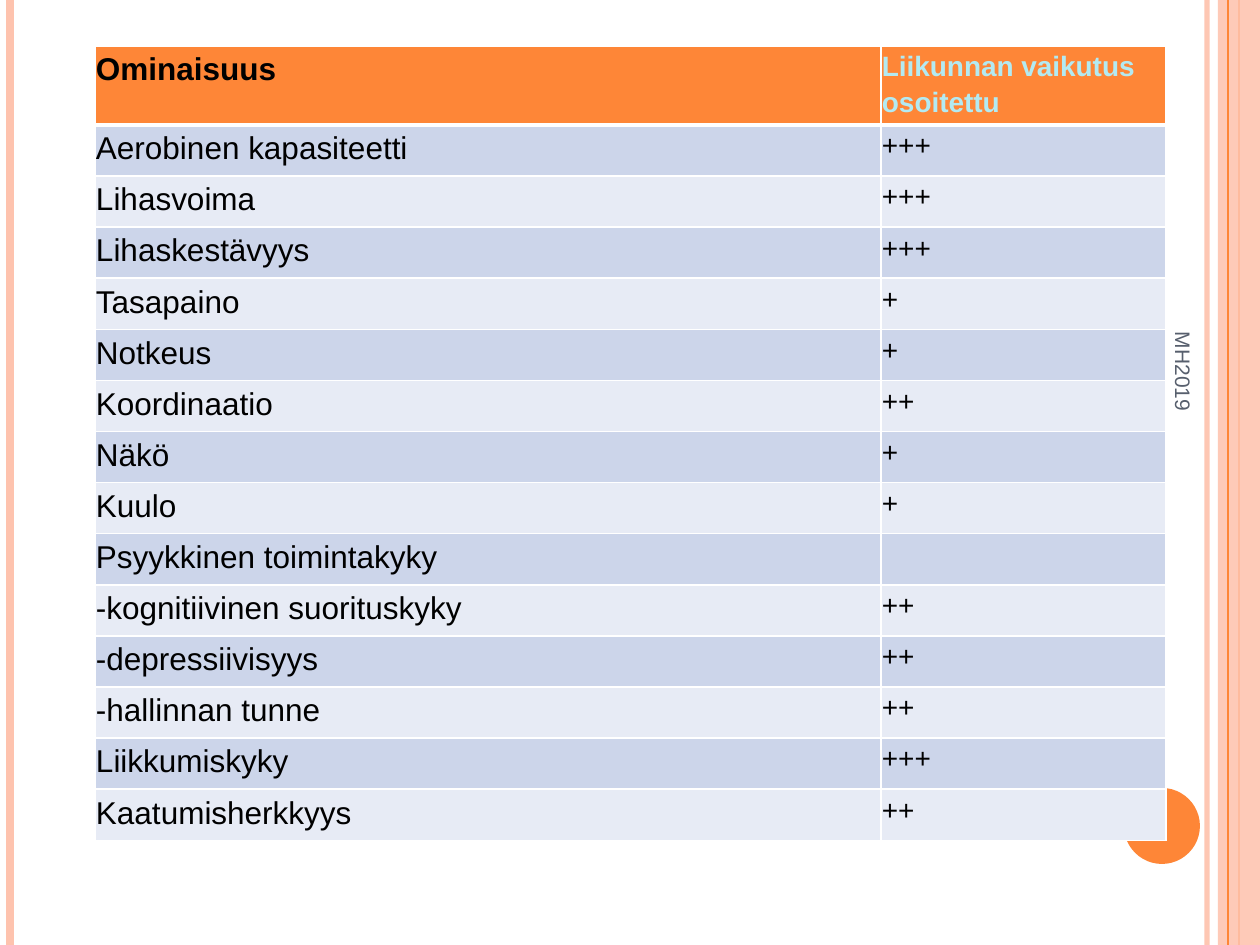
from lxml.etree import SubElement
from pptx import Presentation
from pptx.dml.color import RGBColor
from pptx.enum.shapes import MSO_CONNECTOR, MSO_SHAPE
from pptx.enum.text import MSO_ANCHOR
from pptx.oxml.ns import qn
from pptx.util import Emu, Pt

COLORS = {
    "white": "FFFFFF",
    "black": "000000",
    "orange": "FE8637",
    "peach": "FEC3AE",
    "aqua": "B3EAF2",
    "slate": "575F6D",
    "band_dark": "CCD5EA",
    "band_light": "E7EBF5",
}
SCALE = 914400 / 126
HEADER = ("Ominaisuus", "Liikunnan vaikutus osoitettu")
EFFECTS = [
    ("Aerobinen kapasiteetti", "+++"),
    ("Lihasvoima", "+++"),
    ("Lihaskestävyys", "+++"),
    ("Tasapaino", "+"),
    ("Notkeus", "+"),
    ("Koordinaatio", "++"),
    ("Näkö", "+"),
    ("Kuulo", "+"),
    ("Psyykkinen toimintakyky", ""),
    ("-kognitiivinen suorituskyky", "++"),
    ("-depressiivisyys", "++"),
    ("-hallinnan tunne", "++"),
    ("Liikkumiskyky", "+++"),
    ("Kaatumisherkkyys", "++"),
]


def px(length):
    return Emu(round(length * SCALE))


def rgb(name):
    return RGBColor.from_string(COLORS[name])


class SlideBuilder:
    """Draws styled elements on the current slide."""

    font_name = "Arial"
    text_sizes = (18, 16)

    def __init__(self, slide):
        self.slide = slide

    def set_opacity(self, element, percent):
        for color in element.iter(qn("a:srgbClr")):
            SubElement(color, qn("a:alpha"), val=str(percent * 1000))

    def format_paragraph(self, paragraph, size, color, bold=False):
        font = paragraph.font
        font.name, font.size, font.bold = self.font_name, Pt(size), bold
        font.color.rgb = rgb(color)

    def vertical_line(self, x, color, width, opacity=100):
        line = self.slide.shapes.add_connector(
            MSO_CONNECTOR.STRAIGHT, px(x), 0, px(x), px(945))
        line.line.color.rgb = rgb(color)
        line.line.width = Pt(width)
        properties = line._element.spPr
        SubElement(properties, qn("a:effectLst"))
        if opacity < 100:
            self.set_opacity(properties, opacity)

    def shape(self, kind, left, top, width, height, color, opacity=100):
        shape = self.slide.shapes.add_shape(
            kind, px(left), px(top), px(width), px(height))
        shape.shadow.inherit = False
        shape.fill.solid()
        shape.fill.fore_color.rgb = rgb(color)
        shape.line.fill.background()
        if opacity < 100:
            self.set_opacity(shape._element.spPr, opacity)

    def cell_borders(self, cell, top, bottom):
        properties = cell._tc.get_or_add_tcPr()
        widths = {"lnL": 1, "lnR": 1, "lnT": top, "lnB": bottom}
        for side, width in widths.items():
            border = SubElement(properties, qn(f"a:{side}"), w=str(Pt(width)))
            fill = SubElement(border, qn("a:solidFill"))
            SubElement(fill, qn("a:srgbClr"), val=COLORS["white"])

    def cell(self, cell, text, size, color, fill, bold, top, bottom):
        self.cell_borders(cell, top, bottom)
        cell.fill.solid()
        cell.fill.fore_color.rgb = rgb(fill)
        cell.margin_left = cell.margin_right = px(1)
        cell.margin_top = cell.margin_bottom = px(1)
        cell.text = text
        paragraph = cell.text_frame.paragraphs[0]
        paragraph.line_spacing = 1.15
        self.format_paragraph(paragraph, size, color, bold)

    def table(self, left, top, widths, header_height, body_height, rows):
        frame = self.slide.shapes.add_table(
            len(rows), len(widths), px(left), px(top),
            px(sum(widths)), px(header_height + body_height))
        table = frame.table
        for column, width in zip(table.columns, widths):
            column.width = px(width)
        for index, values in enumerate(rows):
            is_header = index == 0
            table.rows[index].height = (
                px(header_height) if is_header
                else px(body_height / (len(rows) - 1)))
            band = "band_dark" if index % 2 else "band_light"
            for column, text in enumerate(values):
                self.cell(
                    table.cell(index, column), text, self.text_sizes[column],
                    color="aqua" if is_header and column else "black",
                    fill="orange" if is_header else band,
                    bold=is_header,
                    top=3 if index == 1 else 1,
                    bottom=3 if is_header else 1)

    def side_text(self, text, left, top, width, height):
        box = self.slide.shapes.add_textbox(
            px(left), px(top), px(width), px(height))
        box.rotation = 90
        box.text_frame.word_wrap = True
        box.text_frame.vertical_anchor = MSO_ANCHOR.MIDDLE
        box.text_frame.text = text
        self.format_paragraph(box.text_frame.paragraphs[0], 12, "slate")


def main():
    deck = Presentation()
    deck.slide_width, deck.slide_height = px(1260), px(945)
    page = SlideBuilder(deck.slides.add_slide(deck.slide_layouts[6]))
    page.vertical_line(1207, "peach", 3, opacity=93)
    page.vertical_line(10, "peach", 4.5)
    page.vertical_line(1239, "orange", 1.5)
    page.shape(MSO_SHAPE.RECTANGLE, 1218, 0, 42, 945, "peach", opacity=87)
    page.vertical_line(1228, "orange", 0.75)
    page.shape(MSO_SHAPE.OVAL, 1124, 788, 76, 76, "orange")
    page.table(95, 46, (786, 285), 79, 716, [HEADER, *EFFECTS])
    page.side_text("MH2019", 963, 515, 441, 50)
    deck.save("out.pptx")


if __name__ == "__main__":
    main()
